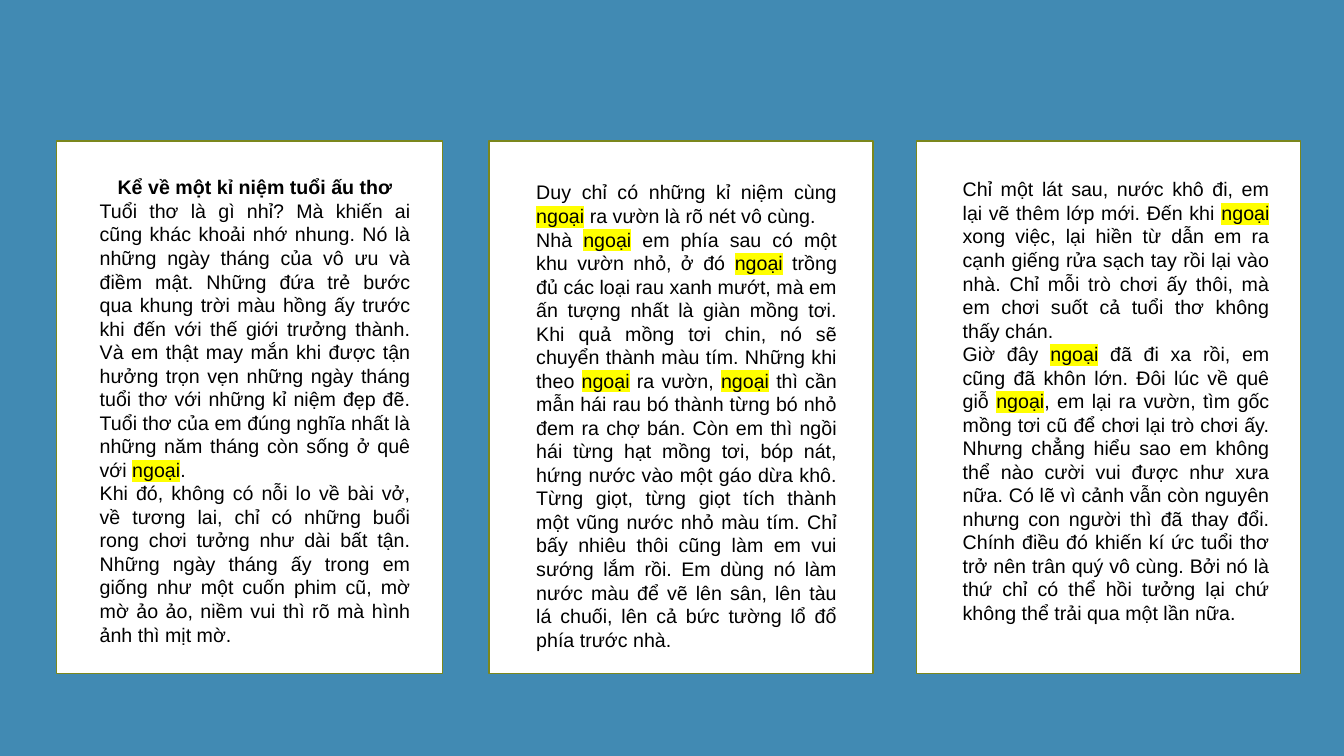
from lxml import etree
from pptx import Presentation
from pptx.dml.color import RGBColor
from pptx.enum.shapes import MSO_SHAPE
from pptx.enum.text import MSO_AUTO_SIZE, PP_ALIGN
from pptx.oxml.ns import qn
from pptx.util import Inches, Pt

RECT = MSO_SHAPE.RECTANGLE
GROW = MSO_AUTO_SIZE.SHAPE_TO_FIT_TEXT
MID, FULL = PP_ALIGN.CENTER, PP_ALIGN.JUSTIFY

COLORS = {
    "back": "418AB3",
    "card": "FFFFFF",
    "edge": "7B871D",
    "ink": "000000",
    "mark": "FFFF00",
}
KEY = "ngoại"
TITLE = "Kể về một kỉ niệm tuổi ấu thơ"

# Each card: its left and width, the box of its text, its title, its paragraphs
CARDS = [
    (0.56, 3.83, (0.33, 0.29, 3.28, 4.85), TITLE, [
        "Tuổi thơ là gì nhỉ? Mà khiến ai cũng khác khoải nhớ nhung. Nó là "
        "những ngày tháng của vô ưu và điềm mật. Những đứa trẻ bước qua khung "
        "trời màu hồng ấy trước khi đến với thế giới trưởng thành. Và em thật "
        "may mắn khi được tận hưởng trọn vẹn những ngày tháng tuổi thơ với "
        "những kỉ niệm đẹp đẽ. Tuổi thơ của em đúng nghĩa nhất là những năm "
        "tháng còn sống ở quê với ngoại.",
        "Khi đó, không có nỗi lo về bài vở, về tương lai, chỉ có những buổi "
        "rong chơi tưởng như dài bất tận. Những ngày tháng ấy trong em giống "
        "như một cuốn phim cũ, mờ mờ ảo ảo, niềm vui thì rõ mà hình ảnh thì "
        "mịt mờ.",
    ]),
    (4.85, 3.81, (0.37, 0.34, 3.18, 4.81), None, [
        "Duy chỉ có những kỉ niệm cùng ngoại ra vườn là rõ nét vô cùng. ",
        "Nhà ngoại em phía sau có một khu vườn nhỏ, ở đó ngoại trồng đủ các "
        "loại rau xanh mướt, mà em ấn tượng nhất là giàn mồng tơi. Khi quả "
        "mồng tơi chin, nó sẽ chuyển thành màu tím. Những khi theo ngoại ra "
        "vườn, ngoại thì cần mẫn hái rau bó thành từng bó nhỏ đem ra chợ bán. "
        "Còn em thì ngồi hái từng hạt mồng tơi, bóp nát, hứng nước vào một gáo "
        "dừa khô. Từng giọt, từng giọt tích thành một vũng nước nhỏ màu tím. "
        "Chỉ bấy nhiêu thôi cũng làm em vui sướng lắm rồi. Em dùng nó làm nước "
        "màu để vẽ lên sân, lên tàu lá chuối, lên cả bức tường lổ đổ phía "
        "trước nhà.",
    ]),
    (9.09, 3.81, (0.36, 0.31, 3.24, 4.58), None, [
        "Chỉ một lát sau, nước khô đi, em lại vẽ thêm lớp mới. Đến khi ngoại "
        "xong việc, lại hiền từ dẫn em ra cạnh giếng rửa sạch tay rồi lại vào "
        "nhà. Chỉ mỗi trò chơi ấy thôi, mà em chơi suốt cả tuổi thơ không thấy "
        "chán.",
        "Giờ đây ngoại đã đi xa rồi, em cũng đã khôn lớn. Đôi lúc về quê giỗ "
        "ngoại, em lại ra vườn, tìm gốc mồng tơi cũ để chơi lại trò chơi ấy. "
        "Nhưng chẳng hiểu sao em không thể nào cười vui được như xưa nữa. Có "
        "lẽ vì cảnh vẫn còn nguyên nhưng con người thì đã thay đổi. Chính điều "
        "đó khiến kí ức tuổi thơ trở nên trân quý vô cùng. Bởi nó là thứ chỉ "
        "có thể hồi tưởng lại chứ không thể trải qua một lần nữa.",
    ]),
]


def paint(fill, color):
    fill.solid()
    fill.fore_color.rgb = RGBColor.from_string(color)


def add_run(para, text, font="Arial", size=14, color=COLORS["ink"],
            bold=False, mark=None):
    run = para.add_run()
    run.text = text
    run.font.name, run.font.size, run.font.bold = font, Pt(size), bold
    paint(run.font.fill, color)
    if mark:
        light = etree.Element(qn("a:highlight"))
        etree.SubElement(light, qn("a:srgbClr"), val=mark)
        run.font.fill  # noqa
        run._r.rPr.find(qn("a:solidFill")).addnext(light)


def add_text(shapes, box, paras):
    """Add a text box; paras holds (alignment, [(text, format), ...])."""
    frame = shapes.add_textbox(*map(Inches, box)).text_frame
    frame.word_wrap = True
    frame.auto_size = GROW
    for i, (align, runs) in enumerate(paras):
        para = frame.add_paragraph() if i else frame.paragraphs[0]
        para.alignment = align
        for text, style in runs:
            add_run(para, text, **style)


def split_key(text):
    """Cut text into runs, with every KEY highlighted."""
    runs = []
    for i, part in enumerate(text.split(KEY)):
        if i:
            runs.append((KEY, {"mark": COLORS["mark"]}))
        if part:
            runs.append((part, {}))
    return runs


def add_card(slide, box, inner, title, story):
    left, top = box[:2]
    dx, dy, width, height = inner
    shapes = slide.shapes.add_group_shape().shapes
    card = shapes.add_shape(RECT, *map(Inches, box))
    card.shadow.inherit = False
    paint(card.fill, COLORS["card"])
    paint(card.line.fill, COLORS["edge"])
    card.line.width = Pt(1)
    paras = [(MID, [(title, {"bold": True})])] if title else []
    paras += [(FULL, split_key(text)) for text in story]
    add_text(shapes, (left + dx, top + dy, width, height), paras)


def main():
    deck = Presentation()
    deck.slide_width, deck.slide_height = Inches(13.33), Inches(7.5)
    slide = deck.slides.add_slide(deck.slide_layouts[6])
    paint(slide.background.fill, COLORS["back"])
    for left, width, inner, title, story in CARDS:
        add_card(slide, (left, 1.4, width, 5.28), inner, title, story)
    deck.save("out.pptx")


if __name__ == "__main__":
    main()
